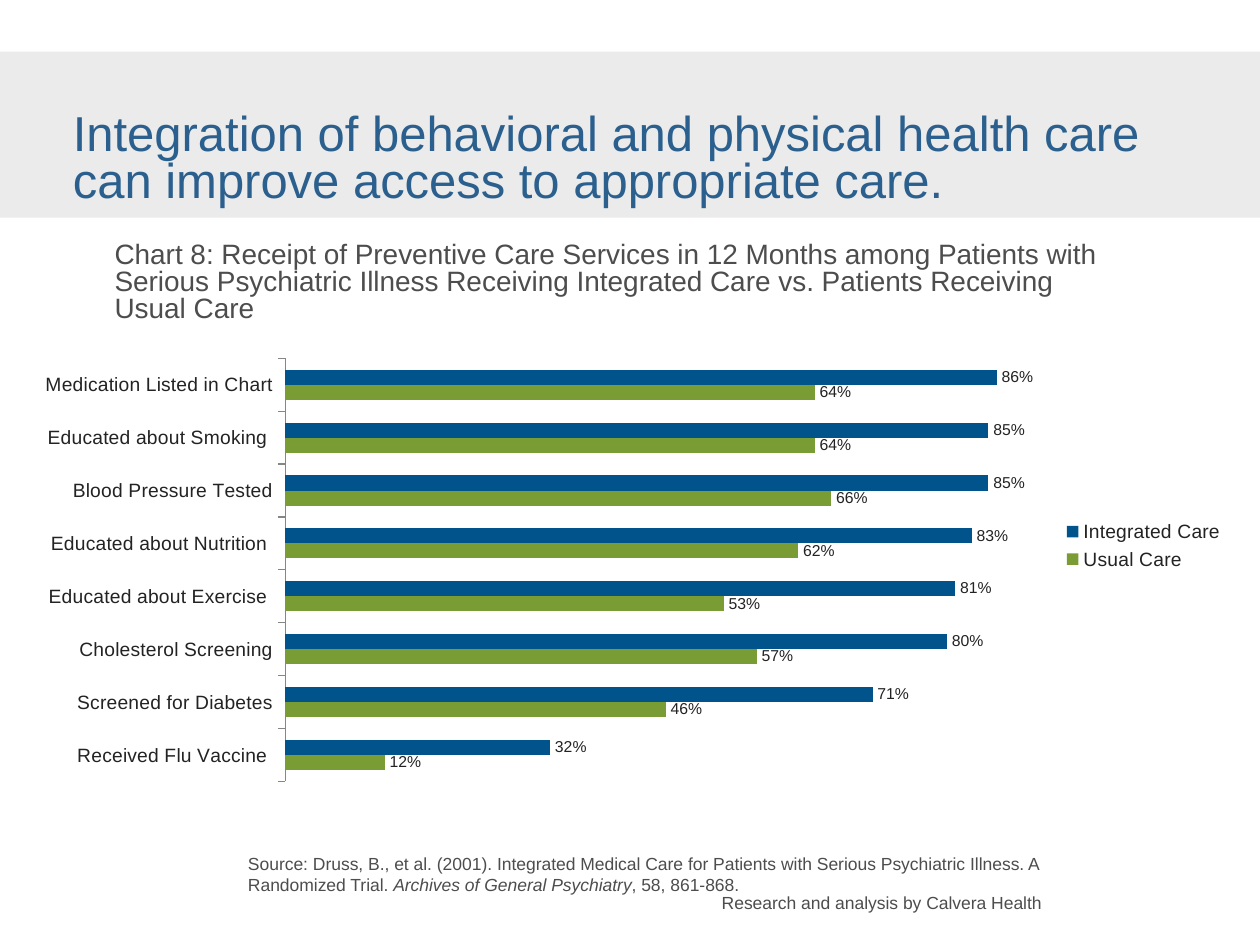
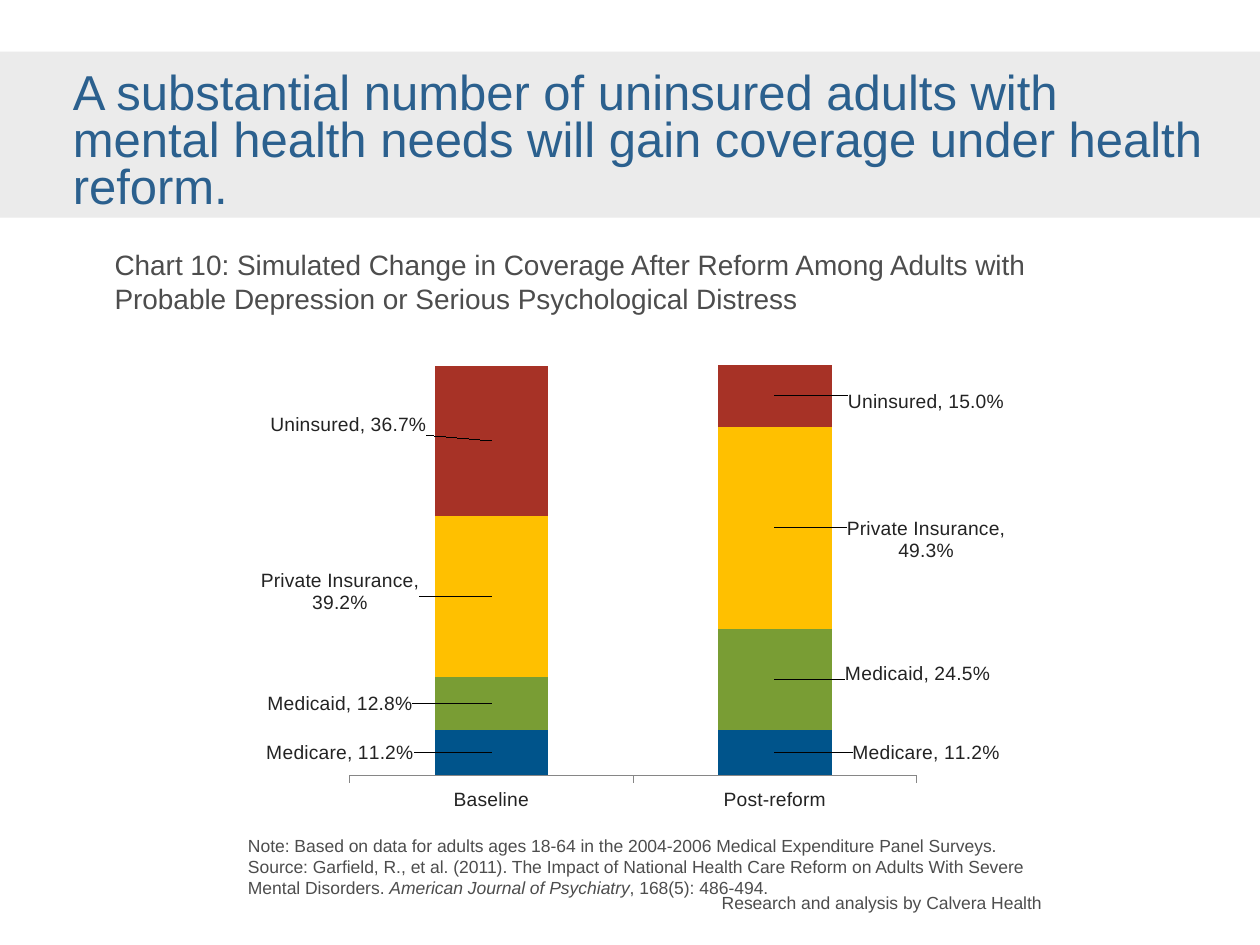
from dataclasses import dataclass

from lxml import etree
from pptx import Presentation
from pptx.chart.chart import Chart
from pptx.chart.data import CategoryChartData
from pptx.dml.color import RGBColor
from pptx.enum.chart import (XL_CHART_TYPE, XL_LABEL_POSITION, XL_LEGEND_POSITION,
                             XL_TICK_LABEL_POSITION, XL_TICK_MARK)
from pptx.enum.shapes import MSO_SHAPE
from pptx.oxml import parse_xml
from pptx.oxml.ns import nsdecls, qn
from pptx.slide import Slide
from pptx.util import Cm, Pt

BAR_CLUSTERED = XL_CHART_TYPE.BAR_CLUSTERED
COLUMN_STACKED = XL_CHART_TYPE.COLUMN_STACKED
OUTSIDE_END = XL_LABEL_POSITION.OUTSIDE_END
LEGEND_RIGHT = XL_LEGEND_POSITION.RIGHT
LABELS_LOW = XL_TICK_LABEL_POSITION.LOW
TICK_OUTSIDE = XL_TICK_MARK.OUTSIDE
TICK_NONE = XL_TICK_MARK.NONE
RECTANGLE = MSO_SHAPE.RECTANGLE

FONT = "Arial"
COLORS = {
    "band": "EBEBEB", "title": "2B608E", "body": "4D4D4D", "chart_text": "232323",
    "axis": "868686", "blue": "00548B", "green": "799D34", "yellow": "FFC000",
    "red": "A73226",
}


@dataclass(frozen=True)
class Box:
    """Place and size in centimetres."""
    left: float
    top: float
    width: float
    height: float

    def lengths(self) -> tuple[Cm, Cm, Cm, Cm]:
        return Cm(self.left), Cm(self.top), Cm(self.width), Cm(self.height)


@dataclass(frozen=True)
class TextStyle:
    size: int
    color: str
    line_spacing: float | None = None


@dataclass(frozen=True)
class Run:
    text: str
    italic: bool = False


@dataclass(frozen=True)
class Measure:
    """One data series; label_shifts are offsets as fractions of the chart."""
    name: str
    values: tuple[float, ...]
    color: str
    label_shifts: tuple[tuple[float, float], ...] = ()


@dataclass(frozen=True)
class ChartSpec:
    kind: int
    box: Box
    plot_area: tuple[float, float, float, float]
    categories: tuple[str, ...]
    measures: tuple[Measure, ...]
    number_format: str
    axis_maximum: float
    label_size: int
    overlap: int = 0
    legend: bool = False


TITLE = TextStyle(28, "title", 0.8)
CAPTION = TextStyle(16, "body")
TIGHT_CAPTION = TextStyle(16, "body", 0.8)
SMALL = TextStyle(10, "body")

BAND = Box(0, 1.04, 25.4, 3.35)
CREDIT = Box(14.55, 17.98, 6.71, 0.43)

PREVENTIVE_CARE = ChartSpec(
    BAR_CLUSTERED, Box(0.53, 5.18, 24.41, 11.63), (0.214, 0.176, 0.683, 0.733),
    ("Received Flu Vaccine ", "Screened for Diabetes", "Cholesterol Screening",
     "Educated about Exercise ", "Educated about Nutrition ", "Blood Pressure Tested",
     "Educated about Smoking ", "Medication Listed in Chart"),
    (Measure("Usual Care", (0.12, 0.46, 0.57, 0.53, 0.62, 0.66, 0.64, 0.64), "green"),
     Measure("Integrated Care", (0.32, 0.71, 0.8, 0.81, 0.83, 0.85, 0.85, 0.86), "blue")),
    "0%", 1.0, 9, legend=True)

COVERAGE = ChartSpec(
    COLUMN_STACKED, Box(4.93, 5.28, 16.94, 11.28), (0.125, 0.038, 0.675, 0.88),
    ("Baseline", "Post-reform"),
    (Measure("Medicare", (0.112, 0.112), "blue", ((-0.18, 0), (0.18, 0))),
     Measure("Medicaid", (0.128, 0.245), "green", ((-0.18, 0), (0.17, -0.01))),
     Measure("Private Insurance", (0.392, 0.493), "yellow", ((-0.18, -0.01), (0.18, 0.02))),
     Measure("Uninsured", (0.367, 0.15), "red", ((-0.17, -0.03), (0.18, 0.01)))),
    "0.0%", 1.2, 11, overlap=100)


def rgb(name: str) -> RGBColor:
    return RGBColor.from_string(COLORS[name])


def set_font(font, size: int, color: str) -> None:
    font.name = FONT
    font.size = Pt(size)
    font.color.rgb = rgb(color)


def add_text(slide: Slide, box: Box, style: TextStyle, *paragraphs: tuple[Run, ...]) -> None:
    frame = slide.shapes.add_textbox(*box.lengths()).text_frame
    frame.word_wrap = True
    frame.margin_left = frame.margin_right = frame.margin_top = frame.margin_bottom = 0
    for index, runs in enumerate(paragraphs):
        paragraph = frame.add_paragraph() if index else frame.paragraphs[0]
        set_font(paragraph.font, style.size, style.color)
        if style.line_spacing:
            paragraph.line_spacing = style.line_spacing
        for part in runs:
            run = paragraph.add_run()
            run.text = part.text
            if part.italic:
                run.font.italic = True


def manual_layout(**settings: float | str) -> etree._Element:
    layout = parse_xml(f"<c:layout {nsdecls('c')}><c:manualLayout/></c:layout>")
    for tag, value in settings.items():
        etree.SubElement(layout[0], qn(f"c:{tag}")).set("val", str(value))
    return layout


def clear_background(chart: Chart) -> None:
    chart_space = chart._chartSpace
    chart_space.find(qn("c:chart")).addnext(parse_xml(
        f"<c:spPr {nsdecls('c', 'a')}><a:noFill/><a:ln><a:noFill/></a:ln></c:spPr>"))


def place_plot_area(chart: Chart, area: tuple[float, float, float, float]) -> None:
    plot_area = chart._chartSpace.find(f"{qn('c:chart')}/{qn('c:plotArea')}")
    for layout in plot_area.findall(qn("c:layout")):
        plot_area.remove(layout)
    x, y, w, h = area
    plot_area.insert(0, manual_layout(layoutTarget="inner", xMode="edge", yMode="edge",
                                      x=x, y=y, w=w, h=h))


def label_points(series, measure: Measure, size: int) -> None:
    """Write name and share beside each segment."""
    for index, (x, y) in enumerate(measure.label_shifts):
        frame = series.points[index].data_label.text_frame
        run = frame.paragraphs[0].add_run()
        run.text = f"{measure.name}, {measure.values[index]:.1%}"
        set_font(run.font, size, "chart_text")
        label = series._element.findall(f"{qn('c:dLbls')}/{qn('c:dLbl')}")[index]
        label.find(qn("c:idx")).addnext(manual_layout(x=x, y=y))


def add_chart(slide: Slide, spec: ChartSpec) -> None:
    data = CategoryChartData(number_format=spec.number_format)
    data.categories = spec.categories
    for measure in spec.measures:
        data.add_series(measure.name, measure.values)
    chart = slide.shapes.add_chart(spec.kind, *spec.box.lengths(), data).chart
    chart.has_title = False
    set_font(chart.font, 18, "chart_text")
    clear_background(chart)
    place_plot_area(chart, spec.plot_area)

    # Axes
    categories = chart.category_axis
    categories.major_tick_mark = TICK_OUTSIDE
    categories.minor_tick_mark = TICK_NONE
    categories.tick_label_position = LABELS_LOW
    categories.has_major_gridlines = False
    categories.format.line.color.rgb = rgb("axis")
    categories.format.line.width = Pt(0.75)
    set_font(categories.tick_labels.font, 11, "chart_text")
    shares = chart.value_axis
    shares.minimum_scale, shares.maximum_scale = 0, spec.axis_maximum
    shares.has_major_gridlines = False
    shares.tick_labels.number_format = spec.number_format
    shares.tick_labels.number_format_is_linked = False
    shares.visible = False

    # Bars and their labels
    plot = chart.plots[0]
    plot.vary_by_categories = False
    plot.gap_width = 150
    plot.overlap = spec.overlap
    for series, measure in zip(plot.series, spec.measures):
        series.invert_if_negative = False
        series.format.fill.solid()
        series.format.fill.fore_color.rgb = rgb(measure.color)
        labels = series.data_labels
        labels.show_value = True
        labels.number_format = spec.number_format
        labels.number_format_is_linked = False
        set_font(labels.font, spec.label_size, "chart_text")
        if not measure.label_shifts:
            labels.position = OUTSIDE_END
        label_points(series, measure, spec.label_size)

    chart.has_legend = spec.legend
    if spec.legend:
        chart.legend.position = LEGEND_RIGHT
        chart.legend.include_in_layout = False
        set_font(chart.legend.font, 11, "chart_text")


def add_chart_slide(deck, spec: ChartSpec, title: str, title_box: Box) -> Slide:
    """Band, credit line, chart and title, as on every slide."""
    slide = deck.slides.add_slide(deck.slide_layouts[6])
    band = slide.shapes.add_shape(RECTANGLE, *BAND.lengths())
    band.shadow.inherit = False
    band.fill.solid()
    band.fill.fore_color.rgb = rgb("band")
    band.line.fill.background()
    add_text(slide, CREDIT, SMALL, (Run("Research and analysis by Calvera Health"),))
    add_chart(slide, spec)
    add_text(slide, title_box, TITLE, (Run(title),))
    return slide


def main() -> None:
    deck = Presentation()
    deck.slide_width, deck.slide_height = Cm(25.4), Cm(19.05)

    # Chart 8: preventive care
    slide = add_chart_slide(
        deck, PREVENTIVE_CARE,
        "Integration of behavioral and physical health care can improve access to "
        "appropriate care.", Box(1.47, 2.29, 22.86, 1.9))
    add_text(slide, Box(5, 17.2, 16.81, 1.27), SMALL, (
        Run("Source: Druss, B., et al. (2001). Integrated Medical Care for Patients with "
            "Serious Psychiatric Illness. A Randomized Trial. "),
        Run("Archives of General Psychiatry", italic=True),
        Run(", 58, 861-868.")))
    add_text(slide, Box(2.31, 4.9, 19.96, 1.65), TIGHT_CAPTION, (
        Run("Chart 8: Receipt of Preventive Care Services in 12 Months among Patients with "
            "Serious Psychiatric Illness Receiving Integrated Care vs. Patients Receiving "
            "Usual Care"),))

    # Chart 10: coverage after reform
    slide = add_chart_slide(
        deck, COVERAGE,
        "A substantial number of uninsured adults with mental health needs will gain "
        "coverage under health reform.", Box(1.47, 1.47, 22.86, 2.87))
    add_text(slide, Box(5, 16.84, 15.88, 1.7), SMALL, (
        Run("Note: Based on data for adults ages 18-64 in the 2004-2006 Medical Expenditure "
            "Panel Surveys."),), (
        Run("Source: Garfield, R., et al. (2011). The Impact of National Health Care Reform "
            "on Adults With Severe Mental Disorders. "),
        Run("American Journal of Psychiatry", italic=True),
        Run(", 168(5): 486-494.")))
    add_text(slide, Box(2.31, 5, 19.96, 1.37), CAPTION, (
        Run("Chart 10: Simulated Change in Coverage After Reform Among Adults with Probable "
            "Depression or Serious Psychological Distress"),))

    deck.save("out.pptx")


if __name__ == "__main__":
    main()
